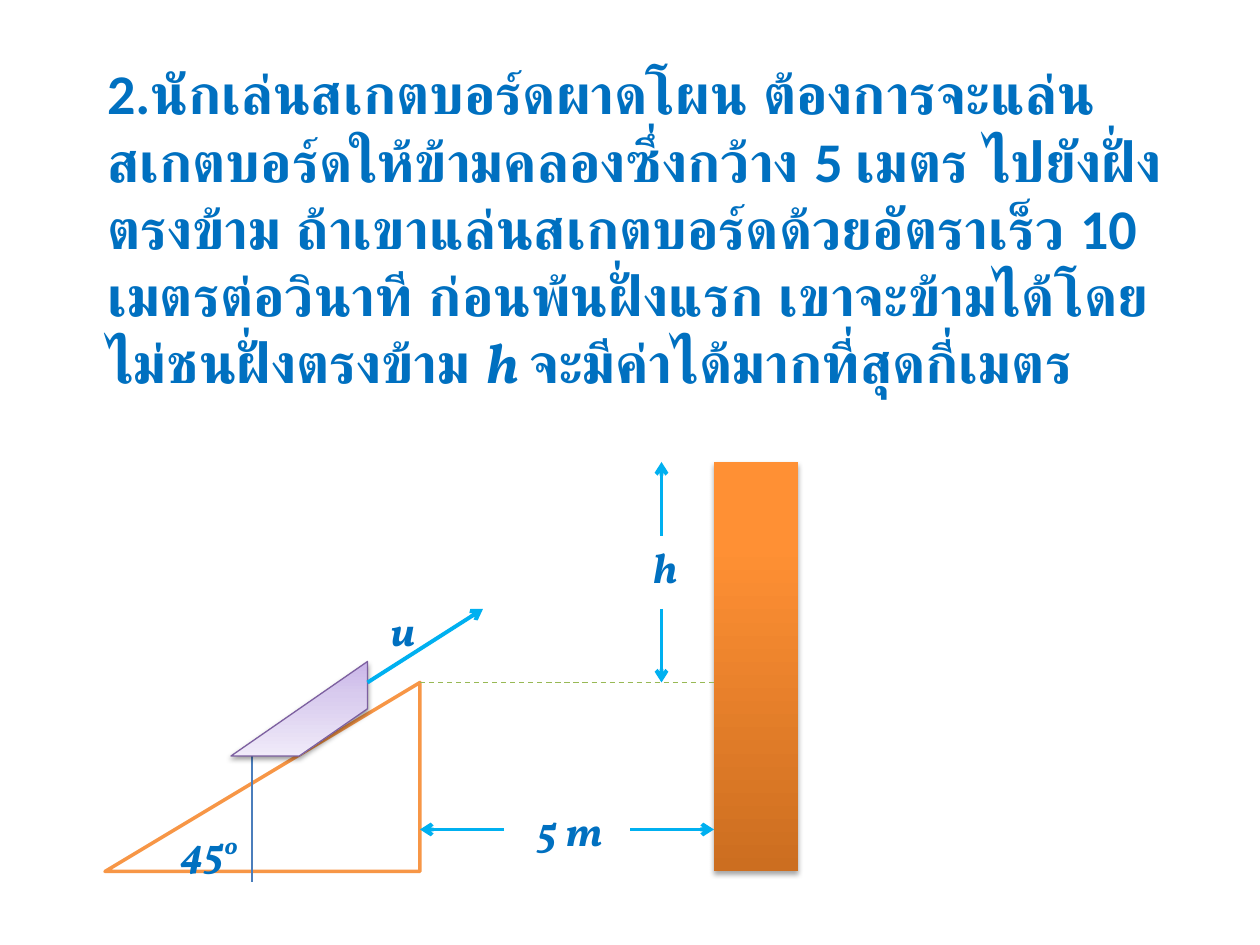
from lxml.etree import SubElement
from pptx import Presentation
from pptx.dml.color import RGBColor
from pptx.enum.dml import MSO_LINE
from pptx.enum.shapes import MSO_CONNECTOR, MSO_SHAPE
from pptx.enum.text import MSO_ANCHOR, MSO_AUTO_SIZE, PP_ALIGN
from pptx.oxml.ns import qn
from pptx.util import Inches, Pt

COLS, ROWS = 120, 90
CELL = Inches(10) // COLS

BLUE = RGBColor(0x00, 0x70, 0xC0)
SKY = RGBColor(0x00, 0xB0, 0xF0)
ORANGE = RGBColor(0xF7, 0x96, 0x46)
GREEN = RGBColor(0x98, 0xB9, 0x55)
ARC_BLUE = RGBColor(0x4B, 0x7E, 0xBC)
PURPLE = RGBColor(0x7D, 0x60, 0xA0)
WHITE = RGBColor(0xFF, 0xFF, 0xFF)
WALL_STOPS = [(0, RGBColor(0xCC, 0x6E, 0x20)), (80, RGBColor(0xFF, 0x90, 0x34)),
              (100, RGBColor(0xFF, 0x91, 0x36))]
BOARD_STOPS = [(0, RGBColor(0xC9, 0xB5, 0xE8)), (35, RGBColor(0xD8, 0xCB, 0xEE)),
               (100, RGBColor(0xF0, 0xEA, 0xF9))]


def grid(*cells):
    return [round(c * CELL) for c in cells]


def add_run(p, text, size, font="Vollkorn", italic=True):
    r = p.add_run()
    r.text = text
    r.font.name = font
    r.font.size = Pt(size)
    r.font.bold = True
    r.font.italic = italic
    r.font.color.rgb = BLUE
    return r


def add_question(s, box, runs):
    sp = s.shapes.title
    sp.left, sp.top, sp.width, sp.height = grid(*box)
    tf = sp.text_frame
    tf.word_wrap = True
    tf.auto_size = MSO_AUTO_SIZE.SHAPE_TO_FIT_TEXT
    tf.vertical_anchor = MSO_ANCHOR.TOP
    p = tf.paragraphs[0]
    p.alignment = PP_ALIGN.LEFT
    for text, font, italic in runs:
        add_run(p, text, 32, font, italic)


def add_label(s, box, text, superscript=None):
    tf = s.shapes.add_textbox(*grid(*box)).text_frame
    tf.word_wrap = False
    tf.auto_size = MSO_AUTO_SIZE.SHAPE_TO_FIT_TEXT
    p = tf.paragraphs[0]
    add_run(p, text, 24)
    if superscript:
        r = add_run(p, superscript, 24)
        r.font._element.set("baseline", "30000")


def add_solid(s, kind, box, rotation=0, line=None, width=0.75):
    sp = s.shapes.add_shape(kind, *grid(*box))
    sp.rotation = rotation
    sp.shadow.inherit = False
    if line is None:
        sp.line.fill.background()
    else:
        sp.line.color.rgb = line
        sp.line.width = Pt(width)
    return sp


def set_gradient(sp, stops):
    sp.fill.gradient()
    sp.fill.gradient_angle = 90
    gs_list = sp._element.spPr.find(".//" + qn("a:gsLst"))
    for gs in list(gs_list):
        gs_list.remove(gs)
    for pos, color in stops:
        gs = SubElement(gs_list, qn("a:gs"), pos=str(pos * 1000))
        SubElement(gs, qn("a:srgbClr"), val=str(color))


def set_shadow(sp, alpha, blur, dist):
    effects = sp._element.spPr.find(qn("a:effectLst"))
    shadow = SubElement(effects, qn("a:outerShdw"), blurRad=str(Pt(blur)),
                        dist=str(Pt(dist)), dir="5400000", rotWithShape="0")
    color = SubElement(shadow, qn("a:srgbClr"), val="000000")
    SubElement(color, qn("a:alpha"), val=str(alpha * 1000))


def add_line(s, start, end, color=SKY, width=2.25, arrow=True):
    c = s.shapes.add_connector(MSO_CONNECTOR.STRAIGHT, *grid(*start, *end))
    c.line.color.rgb = color
    c.line.width = Pt(width)
    if arrow:
        SubElement(c.line._get_or_add_ln(), qn("a:tailEnd"), type="arrow")
    SubElement(c._element.spPr, qn("a:effectLst"))
    return c


def bezier(p0, p1, p2, p3, steps=16):
    for i in range(1, steps + 1):
        t = i / steps
        weights = ((1 - t) ** 3, 3 * t * (1 - t) ** 2, 3 * t * t * (1 - t), t ** 3)
        yield tuple(sum(w * q[k] for w, q in zip(weights, (p0, p1, p2, p3)))
                    for k in (0, 1))


def add_angle_arc(s):
    start, middle, end = (1.73, 6.44), (2.1, 6.53), (1.9, 6.92)
    points = [*bezier(start, (1.9, 6.44), (2.07, 6.45), middle),
              *bezier(middle, (2.13, 6.61), (2.01, 6.77), end)]
    fb = s.shapes.build_freeform(*start, scale=Inches(1))
    fb.add_line_segments(points, close=False)
    sp = fb.convert_to_shape()
    sp.shadow.inherit = False
    sp.fill.background()
    sp.line.color.rgb = ARC_BLUE
    sp.line.width = Pt(0.75)


def main():
    prs = Presentation()
    prs.slide_width, prs.slide_height = grid(COLS, ROWS)
    s = prs.slides.add_slide(prs.slide_layouts[5])

    add_question(s, (9, 5, 104, 27.1), [
        ("2.นักเล่นสเกตบอร์ดผาดโผน ต้องการจะแล่นสเกตบอร์ดให้ข้ามคลองซึ่งกว้าง 5 เมตร "
         "ไปยังฝั่งตรงข้าม ถ้าเขาแล่นสเกตบอร์ดด้วยอัตราเร็ว 10 เมตรต่อวินาที "
         "ก่อนพ้นฝั่งแรก เขาจะข้ามได้โดยไม่ชนฝั่งตรงข้าม ", "Calibri", False),
        ("h ", "Vollkorn", True),
        ("จะมีค่าได้มากที่สุดกี่เมตร", "Calibri", False),
    ])

    wall = add_solid(s, MSO_SHAPE.RECTANGLE, (68, 44, 8, 39))
    set_gradient(wall, WALL_STOPS)
    set_shadow(wall, 35, 3.1, 1.8)

    ramp = add_solid(s, MSO_SHAPE.RIGHT_TRIANGLE, (16, 59, 18, 30), 270, ORANGE, 2)
    ramp.fill.solid()
    ramp.fill.fore_color.rgb = WHITE
    add_label(s, (16, 78, 8, 6), "45", "o")
    add_angle_arc(s)

    board = add_solid(s, MSO_SHAPE.DIAGONAL_STRIPE, (22, 63, 13, 9), 180, PURPLE)
    set_gradient(board, BOARD_STOPS)
    set_shadow(board, 38, 3.1, 1.6)

    for start, end in [((48, 79), (40, 79)), ((60, 79), (68, 79)),
                       ((63, 58), (63, 65)), ((63, 51), (63, 44)),
                       ((35, 65), (46, 58))]:
        add_line(s, start, end)

    add_label(s, (36, 57, 4.7, 6), "u")
    add_label(s, (50, 76, 8.8, 6), "5 m")
    add_label(s, (61, 51, 4.7, 6), "h")

    level = add_line(s, (40, 65), (68, 65), GREEN, 0.75, arrow=False)
    level.line.dash_style = MSO_LINE.DASH

    prs.save("out.pptx")


if __name__ == "__main__":
    main()
